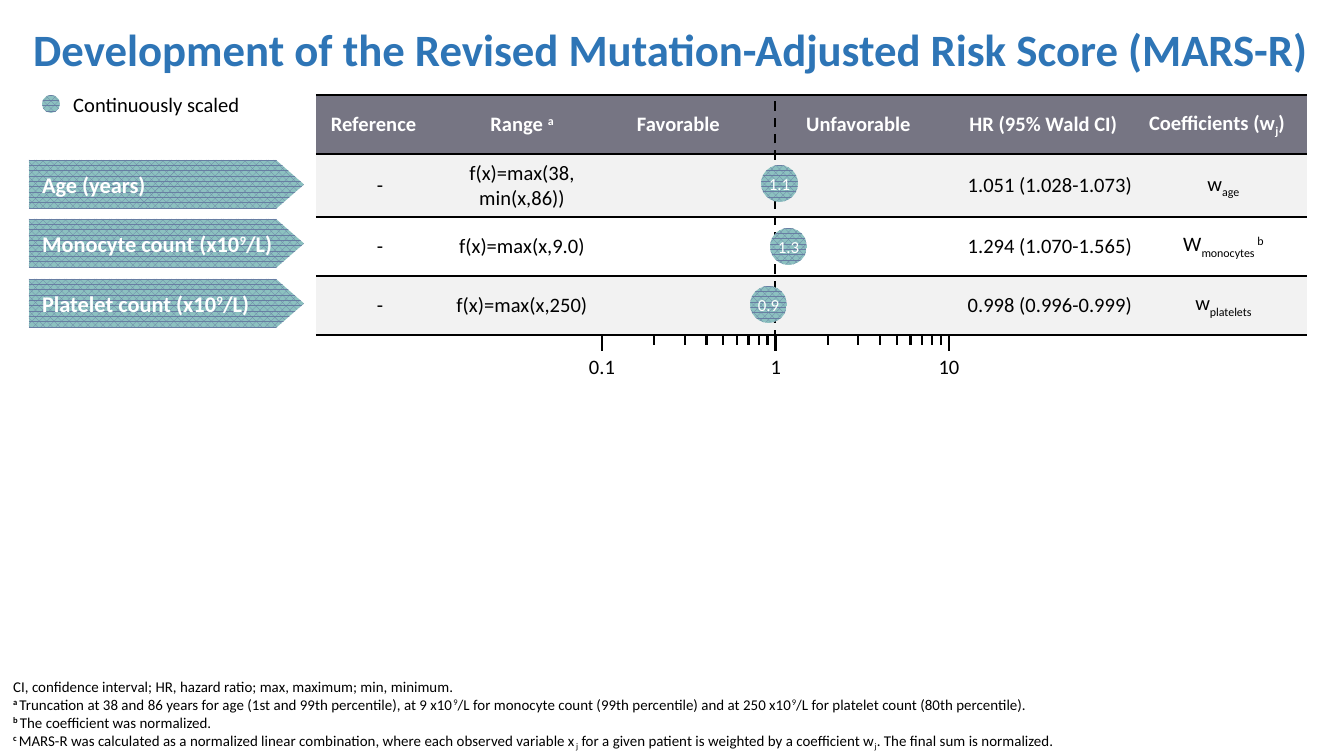
from math import log10

from lxml.etree import SubElement
from pptx import Presentation
from pptx.dml.color import RGBColor
from pptx.enum.dml import MSO_LINE, MSO_PATTERN
from pptx.enum.shapes import MSO_CONNECTOR, MSO_SHAPE
from pptx.enum.text import MSO_ANCHOR as ANCHOR, MSO_AUTO_SIZE as AUTO_SIZE, PP_ALIGN as ALIGN
from pptx.oxml import parse_xml
from pptx.oxml.ns import nsdecls, qn
from pptx.util import Emu, Pt

EMU_PER_PX = 914400 / 134.4
BLUE = RGBColor(0x2E, 0x75, 0xB6)
BLACK = RGBColor(0, 0, 0)
WHITE = RGBColor(0xFF, 0xFF, 0xFF)
HEADER_GREY = RGBColor(0x76, 0x75, 0x83)
BAND_GREY = RGBColor(0xF2, 0xF2, 0xF2)
PATTERN_FRONT = RGBColor(0x68, 0x7E, 0xA3)
PATTERN_BACK = RGBColor(0x8C, 0xC1, 0xC0)
NO_TABLE_STYLE = "{2D5ABB26-0587-4C30-8999-92F81FD0307C}"
BASELINES = {"^": "30000", "_": "-25000"}


def px(length):
    return Emu(round(length * EMU_PER_PX))


class SlideBuilder:
    font = "Calibri"

    def __init__(self, slide):
        self.slide = slide
        self.shapes = slide.shapes

    def set_text(self, frame, text, size, color=BLACK, bold=False, align=ALIGN.LEFT):
        """Lines split at newline, runs at |; a run led by ^ is raised, by _ lowered."""
        frame.text = text
        for paragraph, line in zip(frame.paragraphs, text.split("\n")):
            paragraph.text = ""
            paragraph.alignment = align
            for piece in line.split("|"):
                run = paragraph.add_run()
                baseline = BASELINES.get(piece[0])
                run.text = piece[1:] if baseline else piece
                run.font.name, run.font.size, run.font.bold = self.font, Pt(size), bold
                run.font.color.rgb = color
                if baseline:
                    run._r.get_or_add_rPr().set("baseline", baseline)

    def text_box(self, x, y, width, height, text, size, wrap=True, **style):
        frame = self.shapes.add_textbox(px(x), px(y), px(width), px(height)).text_frame
        frame.word_wrap = wrap
        self.set_text(frame, text, size, **style)
        return frame

    def label(self, x, y, width, text, align=ALIGN.CENTER):
        frame = self.text_box(x, y, width, 39, text, 11, wrap=False, align=align)
        frame.auto_size = AUTO_SIZE.SHAPE_TO_FIT_TEXT

    def fill_pattern(self, shape):
        shape.shadow.inherit = False
        shape.line.fill.background()
        shape.fill.patterned()
        shape.fill.pattern = MSO_PATTERN.PERCENT_75
        shape.fill.fore_color.rgb = PATTERN_FRONT
        shape.fill.back_color.rgb = PATTERN_BACK

    def set_inner_text(self, shape, text, size, inset, **style):
        frame = shape.text_frame
        frame.word_wrap = True
        frame.vertical_anchor = ANCHOR.MIDDLE
        frame.margin_left, frame.margin_right = px(inset), 0
        self.set_text(frame, text, size, WHITE, **style)

    def bubble(self, x, y, diameter, text=None):
        shape = self.shapes.add_shape(MSO_SHAPE.OVAL, px(x), px(y), px(diameter), px(diameter))
        self.fill_pattern(shape)
        if text:
            self.set_inner_text(shape, text, 9, 0, align=ALIGN.CENTER)

    def arrow_tag(self, x, y, width, height, tip, text):
        builder = self.shapes.build_freeform(px(x), px(y))
        shoulder, right, bottom = x + width - tip, x + width, y + height
        points = [(shoulder, y), (right, y + height / 2), (shoulder, bottom), (x, bottom)]
        builder.add_line_segments([(px(a), px(b)) for a, b in points], close=True)
        shape = builder.convert_to_shape()
        self.fill_pattern(shape)
        self.set_inner_text(shape, text, 12, 13, bold=True)

    def vertical_line(self, x, start, end, dash=None, shapes=None):
        line = (shapes or self.shapes).add_connector(
            MSO_CONNECTOR.STRAIGHT, px(x), px(start), px(x), px(end))
        line.line.color.rgb = BLACK
        line.line.width = Pt(1.25)
        if dash:
            line.line.dash_style = dash
        SubElement(line._element.spPr, qn("a:effectLst"))

    def rule_cell(self, cell):
        properties = cell._tc.get_or_add_tcPr()
        for index, side in enumerate(("lnT", "lnB")):
            properties.insert(index, parse_xml(
                f'<a:{side} {nsdecls("a")} w="12700"><a:solidFill>'
                f'<a:srgbClr val="{BLACK}"/></a:solidFill></a:{side}>'))

    def table(self, x, y, widths, row_height, rows):
        table = self.shapes.add_table(
            len(rows), len(widths), px(x), px(y),
            px(sum(widths)), px(row_height * len(rows))).table
        table.first_row = table.horz_banding = False
        table._tbl.tblPr[0].text = NO_TABLE_STYLE
        for column, width in zip(table.columns, widths):
            column.width = px(width)
        for row_index, texts in enumerate(rows):
            header = row_index == 0
            table.rows[row_index].height = px(row_height)
            for column_index, text in enumerate(texts):
                cell = table.cell(row_index, column_index)
                if header or row_index % 2:
                    cell.fill.solid()
                    cell.fill.fore_color.rgb = HEADER_GREY if header else BAND_GREY
                else:
                    cell.fill.background()
                self.rule_cell(cell)
                cell.vertical_anchor = ANCHOR.MIDDLE
                cell.margin_left = px(5 if column_index in (1, 4) else 0)
                cell.margin_right = px(13 if header and column_index != 1 else 0)
                if text:
                    self.set_text(cell.text_frame, text, 11, WHITE if header else BLACK,
                                  header, ALIGN.CENTER)
            if not header:
                table.cell(row_index, 2).merge(table.cell(row_index, 3))

    def log_axis(self, x, y, decade, first, decades):
        """Ticks at 1 to 9 times each power of ten, then the closing power."""
        ticks = [first * 10 ** power * step
                 for power in range(decades) for step in range(1, 10)]
        ticks.append(first * 10 ** decades)
        group = self.shapes.add_group_shape()
        for index, value in enumerate(ticks):
            length = 9 if index % 9 else 15
            self.vertical_line(x + decade * log10(value / first), y, y + length,
                               shapes=group.shapes)


HEADER = ["Reference", "Range |^a", "Favorable", "Unfavorable",
          "HR (95% Wald CI)", "Coefficients (w|_j|)"]
# Tag, tag top, range, hazard ratio, coefficient, bubble text, bubble left, bubble top
VARIABLES = [
    ("Age (years)", 160, "f(x)=max(38,\nmin(x,86))", "1.051 (1.028-1.073)",
     "w|_age", "1.1", 761, 165),
    ("Monocyte count (x10|^9|/L)", 219, "f(x)=max(x,9.0)", "1.294 (1.070-1.565)",
     "W|_monocytes |^b", "1.3", 770, 228),
    ("Platelet count (x10|^9|/L)", 279, "f(x)=max(x,250)", "0.998 (0.996-0.999)",
     "w|_platelets", "0.9", 750, 286),
]
FOOTNOTES = "\n".join([
    "CI, confidence interval; HR, hazard ratio; max, maximum; min, minimum.",
    "^a |Truncation at 38 and 86 years for age (1st and 99th percentile), at 9 x10|^9|/L for "
    "monocyte count (99th percentile) and at 250 x10|^9|/L for platelet count (80th percentile).",
    "^b |The coefficient was normalized.",
    "^c |MARS-R was calculated as a normalized linear combination, where each observed variable "
    "x|_j| for a given patient is weighted by a coefficient w|_j|. The final sum is normalized.",
])


def main():
    presentation = Presentation()
    presentation.slide_width, presentation.slide_height = px(1344), px(756)
    builder = SlideBuilder(presentation.slides.add_slide(presentation.slide_layouts[6]))

    # Title
    title = builder.text_box(0, 7, 1341, 90, "Development of the Revised Mutation-Adjusted "
                             "Risk Score (MARS-R)", 24, color=BLUE, bold=True,
                             align=ALIGN.CENTER)
    title.vertical_anchor = ANCHOR.MIDDLE
    title.paragraphs[0].line_spacing = 0.9

    # Table
    rows = [["-", scale, "", "", ratio, coefficient]
            for _, _, scale, ratio, coefficient, *_ in VARIABLES]
    builder.table(316, 95, [128, 151, 180, 180, 185, 167], 59, [HEADER] + rows)

    # Logarithmic axis
    builder.log_axis(602, 336, 173.5, 0.1, 2)
    for x, width, text in [(757, 38, "1"), (925, 48, "10"), (575, 54, "0.1")]:
        builder.label(x, 347, width, text)

    # Footnotes with bold markers
    notes = builder.text_box(0, 671, 1093, 86, FOOTNOTES, 8)
    notes.auto_size = AUTO_SIZE.SHAPE_TO_FIT_TEXT
    for paragraph in notes.paragraphs[1:]:
        paragraph.runs[0].font.bold = True

    # Legend
    builder.bubble(42, 95, 18)
    builder.label(60, 85, 194, "Continuously scaled", ALIGN.LEFT)

    # Reference line, hazard ratios and variable tags
    builder.vertical_line(775, 339, 99, MSO_LINE.DASH)
    for tag, tag_top, *_, value, left, top in VARIABLES:
        builder.bubble(left, top, 37, value)
        builder.arrow_tag(29, tag_top, 275, 49, 28, tag)

    presentation.save("out.pptx")


if __name__ == "__main__":
    main()
